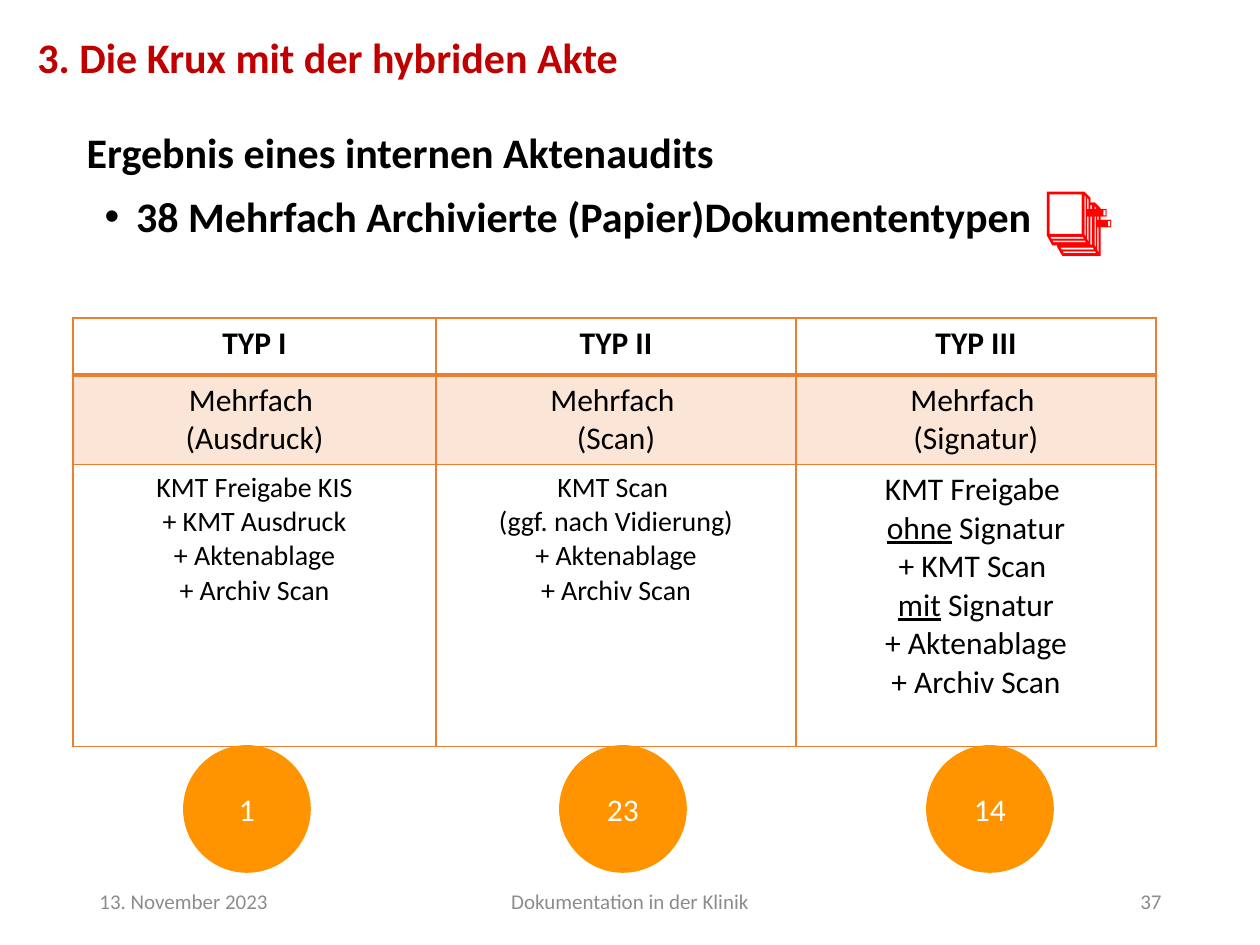
"""Build the slide on multiply archived document types in the hybrid record."""
import pptx
import pptx.dml.color
import pptx.enum.shapes
import pptx.enum.text
import pptx.oxml
import pptx.oxml.ns
import pptx.util

RGBColor = pptx.dml.color.RGBColor
ALIGN = pptx.enum.text.PP_ALIGN
ANCHOR = pptx.enum.text.MSO_ANCHOR

BLACK = RGBColor(0x00, 0x00, 0x00)
WHITE = RGBColor(0xFF, 0xFF, 0xFF)
RED = RGBColor(0xFF, 0x00, 0x00)
DARK_RED = RGBColor(0xC0, 0x00, 0x00)
GREY = RGBColor(0x8C, 0x8C, 0x8C)
ORANGE = RGBColor(0xFF, 0x94, 0x00)
BORDER = RGBColor(0xED, 0x7D, 0x31)
PEACH = RGBColor(0xFB, 0xE5, 0xD6)

FONT = "Calibri"
EMU_PER_PX = 914400 / 126

COL_WIDTHS = (363, 360, 360)
ROW_HEIGHTS = (57, 89, 282)
HEADERS = ("TYP I", "TYP II", "TYP III")
KINDS = ("(Ausdruck)", "(Scan)", "(Signatur)")
FILING = ["+ Aktenablage", "+ Archiv Scan"]
STEPS = (
    ["KMT Freigabe KIS", "+ KMT Ausdruck"],
    ["KMT Scan ", "(ggf. nach Vidierung)"],
    [("KMT Freigabe \v", "ohne", " Signatur"),
     ("+ KMT Scan \v", "mit", " Signatur")],
)
STEP_SIZES = (16, 16, 18)
COUNTS = (("1", 184), ("23", 560), ("14", 927))


def px(n):
    return pptx.util.Emu(round(n * EMU_PER_PX))


def format_runs(p, size, color, bold=False, align=ALIGN.LEFT):
    p.alignment = align
    for r in p.runs:
        r.font.name = FONT
        r.font.size = pptx.util.Pt(size)
        r.font.bold = bold
        r.font.color.rgb = color


def add_text(slide, text, box, size, color, bold=False, align=ALIGN.LEFT,
             anchor=ANCHOR.TOP):
    tf = slide.shapes.add_textbox(*map(px, box)).text_frame
    tf.word_wrap = True
    tf.vertical_anchor = anchor
    tf.text = text
    format_runs(tf.paragraphs[0], size, color, bold, align)


def fill_placeholder(sp, text, box, anchor):
    sp.left, sp.top, sp.width, sp.height = map(px, box)
    tf = sp.text_frame
    tf.auto_size = pptx.enum.text.MSO_AUTO_SIZE.NONE
    tf.vertical_anchor = anchor
    tf.text = text
    p = tf.paragraphs[0]
    p.line_spacing = 0.9
    p.space_before = pptx.util.Pt(0)
    format_runs(p, 24, BLACK, bold=True)
    return p


def add_bullet(p):
    pPr = p._p.get_or_add_pPr()
    indent = pptx.util.Inches(0.25)
    pPr.set("marL", str(indent))
    pPr.set("indent", str(-indent))
    bullet = pptx.oxml.parse_xml(
        f'<a:buChar {pptx.oxml.ns.nsdecls("a")} char="•"/>')
    pPr.append(bullet)


def set_borders(cell, top, bottom):
    tcPr = cell._tc.get_or_add_tcPr()
    for side, width in (("L", 1), ("R", 1), ("T", top), ("B", bottom)):
        tcPr.append(pptx.oxml.parse_xml(
            f'<a:ln{side} {pptx.oxml.ns.nsdecls("a")} w="{pptx.util.Pt(width)}">'
            f'<a:solidFill><a:srgbClr val="{BORDER}"/></a:solidFill>'
            f'</a:ln{side}>'))


def fill_cell(cell, lines, size, bold=False, fill=None, top=1, bottom=1):
    set_borders(cell, top, bottom)
    if fill is None:
        cell.fill.background()
    else:
        cell.fill.solid()
        cell.fill.fore_color.rgb = fill
    tf = cell.text_frame
    for i, line in enumerate(lines):
        p = tf.add_paragraph() if i else tf.paragraphs[0]
        if isinstance(line, tuple):
            head, stressed, tail = line
            p.text = head
            for text, underlined in ((stressed, True), (tail, False)):
                r = p.add_run()
                r.text = text
                r.font.underline = underlined
        else:
            p.text = line
        format_runs(p, size, BLACK, bold, ALIGN.CENTER)


def add_type_table(slide):
    table = slide.shapes.add_table(
        len(ROW_HEIGHTS), len(COL_WIDTHS), px(73), px(318),
        px(sum(COL_WIDTHS)), px(sum(ROW_HEIGHTS))).table
    table.first_row = False
    table.horz_banding = False
    for row, height in zip(table.rows, ROW_HEIGHTS):
        row.height = px(height)
    for i, width in enumerate(COL_WIDTHS):
        table.columns[i].width = px(width)
        fill_cell(table.cell(0, i), [HEADERS[i]], 18, bold=True, bottom=2)
        fill_cell(table.cell(1, i), ["Mehrfach ", KINDS[i]], 18,
                  fill=PEACH, top=2)
        fill_cell(table.cell(2, i), STEPS[i] + FILING, STEP_SIZES[i])


def add_count(slide, text, left):
    sp = slide.shapes.add_shape(pptx.enum.shapes.MSO_SHAPE.OVAL,
                                px(left), px(746), px(126), px(126))
    sp.shadow.inherit = False
    sp.fill.solid()
    sp.fill.fore_color.rgb = ORANGE
    sp.line.color.rgb = ORANGE
    sp.line.width = pptx.util.Pt(1)
    tf = sp.text_frame
    tf.vertical_anchor = ANCHOR.MIDDLE
    tf.text = text
    format_runs(tf.paragraphs[0], 18, WHITE, align=ALIGN.CENTER)


def add_footer(slide):
    for text, left, width, align in (
            ("13. November 2023", 87, 284, ALIGN.LEFT),
            ("Dokumentation in der Klinik", 417, 426, ALIGN.CENTER),
            ("37", 890, 284, ALIGN.RIGHT)):
        add_text(slide, text, (left, 876, width, 50), 12, GREY,
                 align=align, anchor=ANCHOR.MIDDLE)


def main():
    prs = pptx.Presentation()
    prs.slide_width, prs.slide_height = px(1260), px(945)
    slide = prs.slides.add_slide(prs.slide_layouts[1])
    fill_placeholder(slide.shapes.title, "Ergebnis eines internen Aktenaudits",
                     (74, 120, 1086, 69), ANCHOR.MIDDLE)
    p = fill_placeholder(slide.placeholders[1],
                         "38 Mehrfach Archivierte (Papier)Dokumententypen",
                         (92, 190, 1134, 63), ANCHOR.TOP)
    add_bullet(p)
    add_type_table(slide)
    add_text(slide, "📑", (1032, 168, 149, 97), 40, RED)
    for text, left in COUNTS:
        add_count(slide, text, left)
    add_footer(slide)
    add_text(slide, "3. Die Krux mit der hybriden Akte", (25, 25, 1029, 63),
             24, DARK_RED, bold=True)
    prs.save("out.pptx")


if __name__ == "__main__":
    main()
